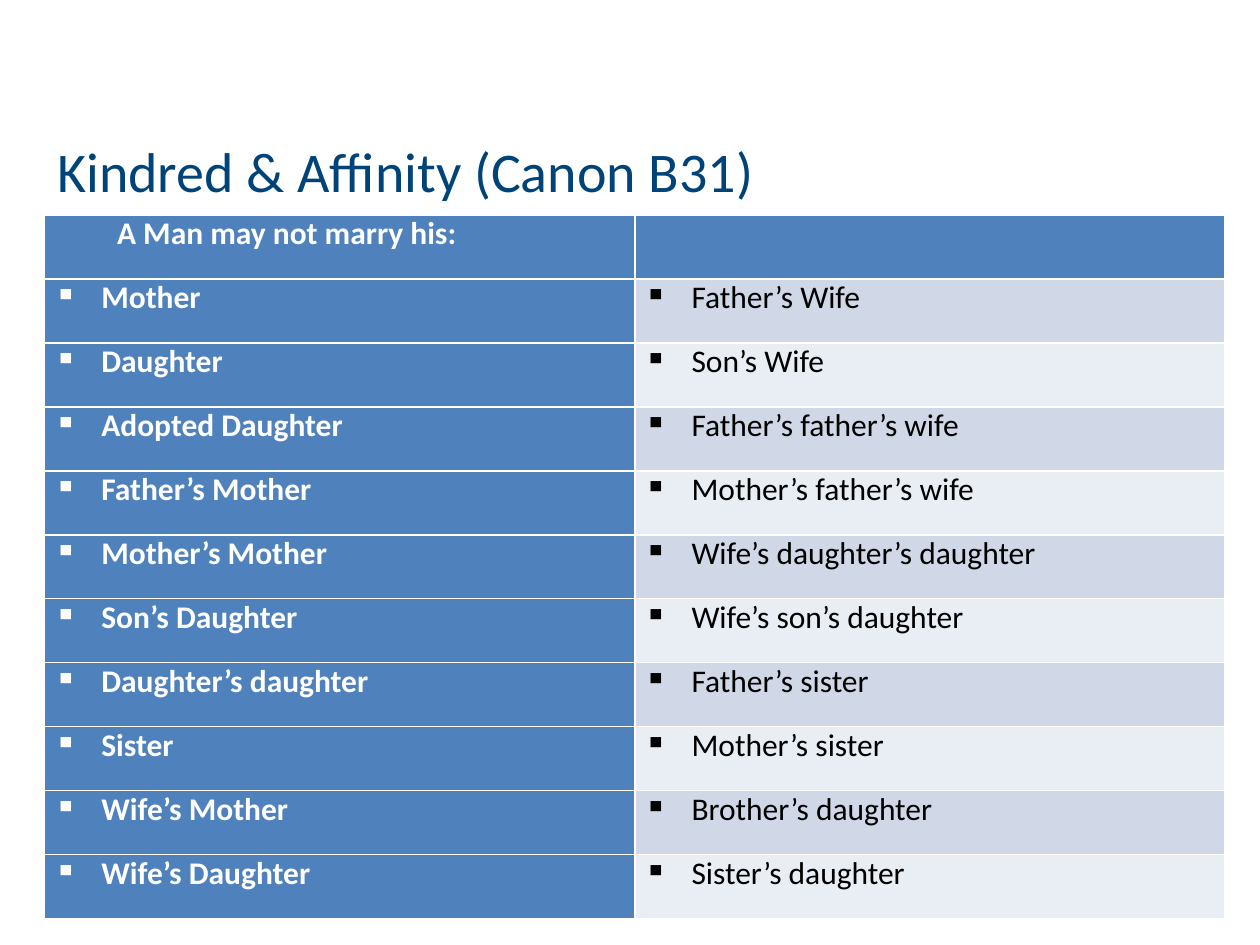
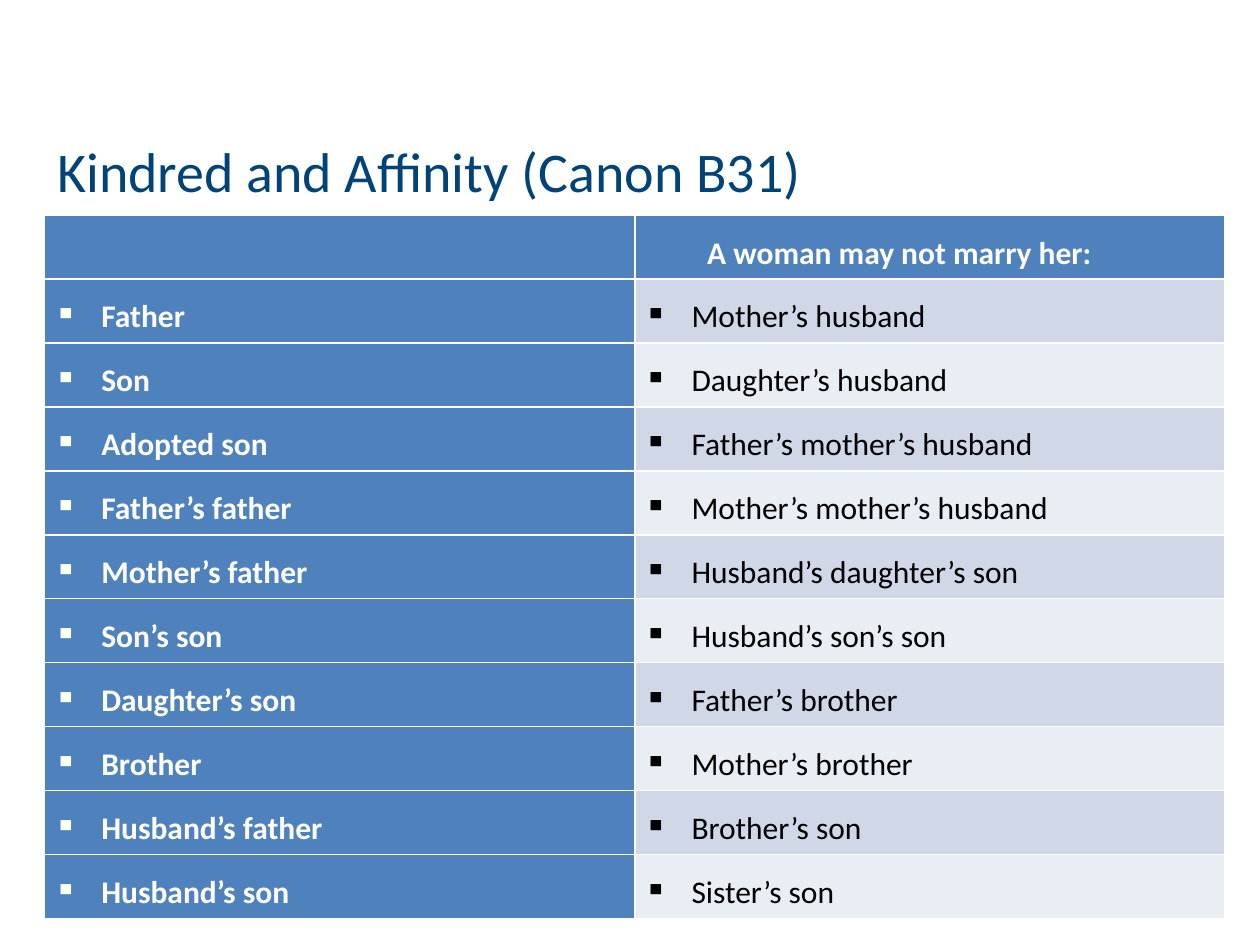
from lxml import etree
from pptx import Presentation
from pptx.dml.color import RGBColor
from pptx.enum.text import MSO_ANCHOR, PP_ALIGN
from pptx.oxml.ns import qn
from pptx.util import Pt

LEFT, JUST = PP_ALIGN.LEFT, PP_ALIGN.JUSTIFY
MIDDLE = MSO_ANCHOR.MIDDLE

FACE = "Calibri"
NAVY, BLUE, WHITE, BLACK = "004379", "4F81BD", "FFFFFF", "000000"
BANDS = ("D0D8E8", "E9EDF4")
EDGE, WIDTH = 25.5, 674.5
HEAD_TOP, HEAD_TALL = 71.5, 51
GRID_TOP, ROW_TALL = 122.75, 36.58
INSETS = {"margin_left": Pt(5.4), "margin_right": Pt(5.4),
          "margin_top": 0, "margin_bottom": 0}

MAN = [
    ("A Man may not marry his:", ""),
    ("Mother", "Father’s Wife"),
    ("Daughter", "Son’s Wife"),
    ("Adopted Daughter", "Father’s father’s wife"),
    ("Father’s Mother", "Mother’s father’s wife"),
    ("Mother’s Mother", "Wife’s daughter’s daughter"),
    ("Son’s Daughter", "Wife’s son’s daughter"),
    ("Daughter’s daughter", "Father’s sister"),
    ("Sister", "Mother’s sister"),
    ("Wife’s Mother", "Brother’s daughter"),
    ("Wife’s Daughter", "Sister’s daughter"),
]
WOMAN = [
    ("", "A woman may not marry her:"),
    ("Father", "Mother’s husband"),
    ("Son", "Daughter’s husband"),
    ("Adopted son", "Father’s mother’s husband"),
    ("Father’s father", "Mother’s mother’s husband"),
    ("Mother’s father", "Husband’s daughter’s son"),
    ("Son’s son", "Husband’s son’s son"),
    ("Daughter’s son", "Father’s brother"),
    ("Brother", "Mother’s brother"),
    ("Husband’s father", "Brother’s son"),
    ("Husband’s son", "Sister’s son"),
]
PAGES = [
    ("Kindred & Affinity (Canon B31)", MAN,
     {"alignment": LEFT, "space_after": Pt(12)}),
    ("Kindred and Affinity (Canon B31)", WOMAN,
     {"alignment": JUST, "line_spacing": 1.5}),
]


def rgb(code):
    return RGBColor.from_string(code)


def apply(item, values):
    for name, value in values.items():
        setattr(item, name, value)


def style(para, size, color, bold=False):
    apply(para.font, {"name": FACE, "size": Pt(size), "bold": bold})
    para.font.color.rgb = rgb(color)


def indent(para, left, first):
    props = para._p.get_or_add_pPr()
    props.set("marL", str(Pt(left)))
    props.set("indent", str(Pt(first)))
    return props


def add_title(slide, text):
    title = slide.shapes.title
    apply(title, {"left": Pt(EDGE), "top": Pt(HEAD_TOP),
                  "width": Pt(WIDTH), "height": Pt(HEAD_TALL)})
    frame = title.text_frame
    apply(frame, {"text": text, "vertical_anchor": MIDDLE, "word_wrap": True})
    para = frame.paragraphs[0]
    para.alignment = LEFT
    style(para, 32, NAVY)


def fill_cell(cell, text, row, col, layout):
    strong = row == 0 or col == 0
    apply(cell, INSETS)
    cell.fill.solid()
    cell.fill.fore_color.rgb = rgb(BLUE if strong else BANDS[(row - 1) % 2])
    if not text:
        return
    cell.text = text
    para = cell.text_frame.paragraphs[0]
    apply(para, layout)
    if row == 0:
        indent(para, 36, 0)
    else:
        props = indent(para, 27, -27)
        etree.SubElement(props, qn("a:buChar")).set("char", "▪")
    style(para, 18, WHITE if strong else BLACK, strong)


def add_grid(slide, rows, layout):
    count = len(rows)
    grid = slide.shapes.add_table(
        count, 2, Pt(EDGE), Pt(GRID_TOP), Pt(WIDTH), Pt(ROW_TALL * count)).table
    apply(grid, {"first_row": True, "first_col": True})
    for row, texts in enumerate(rows):
        grid.rows[row].height = Pt(ROW_TALL)
        for col, text in enumerate(texts):
            fill_cell(grid.cell(row, col), text, row, col, layout)


def main():
    deck = Presentation()
    apply(deck, {"slide_width": Pt(720), "slide_height": Pt(540)})
    for title, rows, layout in PAGES:
        slide = deck.slides.add_slide(deck.slide_layouts[5])
        add_title(slide, title)
        add_grid(slide, rows, layout)
    deck.save("out.pptx")


if __name__ == "__main__":
    main()
